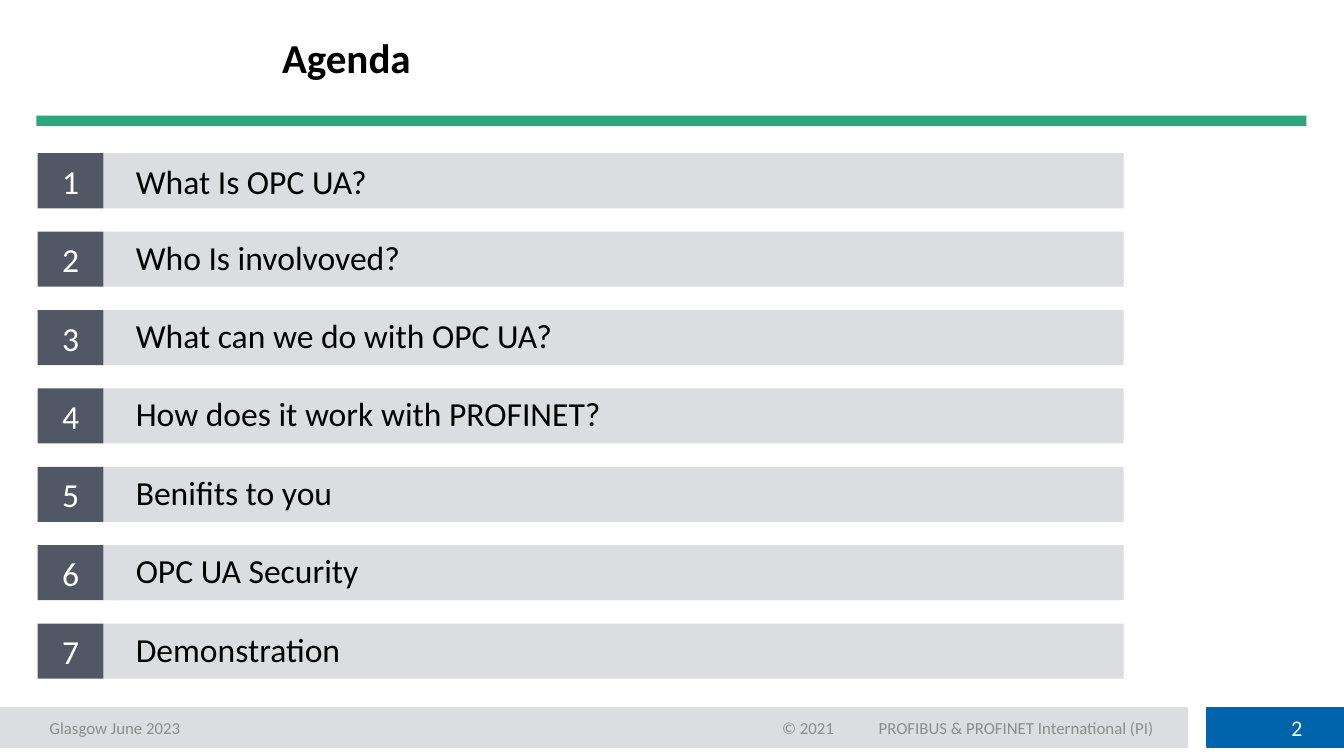
import collections

import pptx
import pptx.dml.color
import pptx.enum.shapes
import pptx.enum.text
import pptx.util

RGBColor = pptx.dml.color.RGBColor
Align = pptx.enum.text.PP_ALIGN

BLACK = RGBColor(0x00, 0x00, 0x00)
WHITE = RGBColor(0xFF, 0xFF, 0xFF)
GREEN = RGBColor(0x2C, 0xA6, 0x7B)
BLUE = RGBColor(0x00, 0x64, 0xAD)
SLATE = RGBColor(0x52, 0x57, 0x65)
LIGHT_GRAY = RGBColor(0xDC, 0xDD, 0xE0)
TEXT_GRAY = RGBColor(0x8C, 0x8C, 0x8C)

FONT = "Calibri"
COLUMNS, ROWS = 1000, 562.5
SLIDE_WIDTH = pptx.util.Inches(10)
SLIDE_HEIGHT = SLIDE_WIDTH * 9 // 16
COLUMN = SLIDE_WIDTH / COLUMNS
ROW = SLIDE_HEIGHT / ROWS

AGENDA = [
    "What Is OPC UA?",
    "Who Is involvoved?",
    "What can we do with OPC UA?",
    "How does it work with PROFINET?",
    "Benifits to you",
    "OPC UA Security",
    "Demonstration",
]

Box = collections.namedtuple("Box", "left top width height")


def to_emu(box):
    return (round(box.left * COLUMN), round(box.top * ROW),
            round(box.width * COLUMN), round(box.height * ROW))


def add_bar(slide, box, fill, outlined=False):
    shape = slide.shapes.add_shape(
        pptx.enum.shapes.MSO_SHAPE.RECTANGLE, *to_emu(box))
    shape.shadow.inherit = False
    shape.fill.solid()
    shape.fill.fore_color.rgb = fill
    if outlined:
        shape.line.color.rgb = fill
        shape.line.width = pptx.util.Pt(1)
    else:
        shape.line.fill.background()
    return shape


def set_text(shape, text, size, color, align=Align.LEFT, margins=(10, 5, 10, 5),
             line_spacing=None, bold=False):
    frame = shape.text_frame
    frame.word_wrap = True
    frame.vertical_anchor = pptx.enum.text.MSO_ANCHOR.MIDDLE
    left, top, right, bottom = margins
    frame.margin_left, frame.margin_right = round(left * COLUMN), round(right * COLUMN)
    frame.margin_top, frame.margin_bottom = round(top * ROW), round(bottom * ROW)
    frame.text = text
    paragraph = frame.paragraphs[0]
    paragraph.alignment = align
    if line_spacing:
        paragraph.line_spacing = line_spacing
    font = paragraph.runs[0].font
    font.name = FONT
    font.size = pptx.util.Pt(size)
    font.bold = bold
    font.color.rgb = color


def add_label(slide, box, *text_settings, **options):
    set_text(slide.shapes.add_textbox(*to_emu(box)), *text_settings, **options)


def build_header(slide, box):
    rule_height = 8
    add_bar(slide, Box(box.left, box.top + box.height - rule_height,
                       box.width, rule_height), GREEN)
    indent = 173
    add_label(slide, Box(box.left + indent, box.top, box.width - indent, 68),
              "Agenda", 22, BLACK, line_spacing=0.9, bold=True)


def build_agenda(slide, box, items):
    row_height, number_width = 41, 49
    pitch = (box.height - row_height) / (len(items) - 1)
    for index, item in enumerate(items):
        top = box.top + index * pitch
        topic = add_bar(slide, Box(box.left + number_width, top,
                                   box.width - number_width, row_height), LIGHT_GRAY)
        set_text(topic, item, 18, BLACK, margins=(24, 5, 10, 5),
                 line_spacing=0.9 if index else None)
        number = add_bar(slide, Box(box.left, top, number_width, row_height), SLATE)
        set_text(number, str(index + 1), 18, WHITE, Align.CENTER, margins=(4, 5, 4, 5))


def build_footer(slide, box):
    def part(left, width):
        return Box(box.left + left, box.top, width, box.height)

    add_bar(slide, part(0, 883), LIGHT_GRAY, outlined=True)
    add_bar(slide, part(898, 102), BLUE, outlined=True)
    add_label(slide, part(27, 314), "Glasgow June 2023", 9, TEXT_GRAY)
    add_label(slide, part(582, 44), "© 2021", 9, TEXT_GRAY, margins=(0, 0, 0, 0))
    add_label(slide, part(644, 226), "PROFIBUS & PROFINET International (PI)",
              9, TEXT_GRAY)
    add_label(slide, part(920, 59), "2", 12, WHITE, Align.RIGHT)


def main():
    presentation = pptx.Presentation()
    presentation.slide_width = SLIDE_WIDTH
    presentation.slide_height = SLIDE_HEIGHT
    slide = presentation.slides.add_slide(presentation.slide_layouts[6])
    build_footer(slide, Box(0, 527, COLUMNS, 29))
    build_header(slide, Box(27, 11, 945, 83))
    build_agenda(slide, Box(28, 114, 808, 391), AGENDA)
    presentation.save("out.pptx")


if __name__ == "__main__":
    main()
